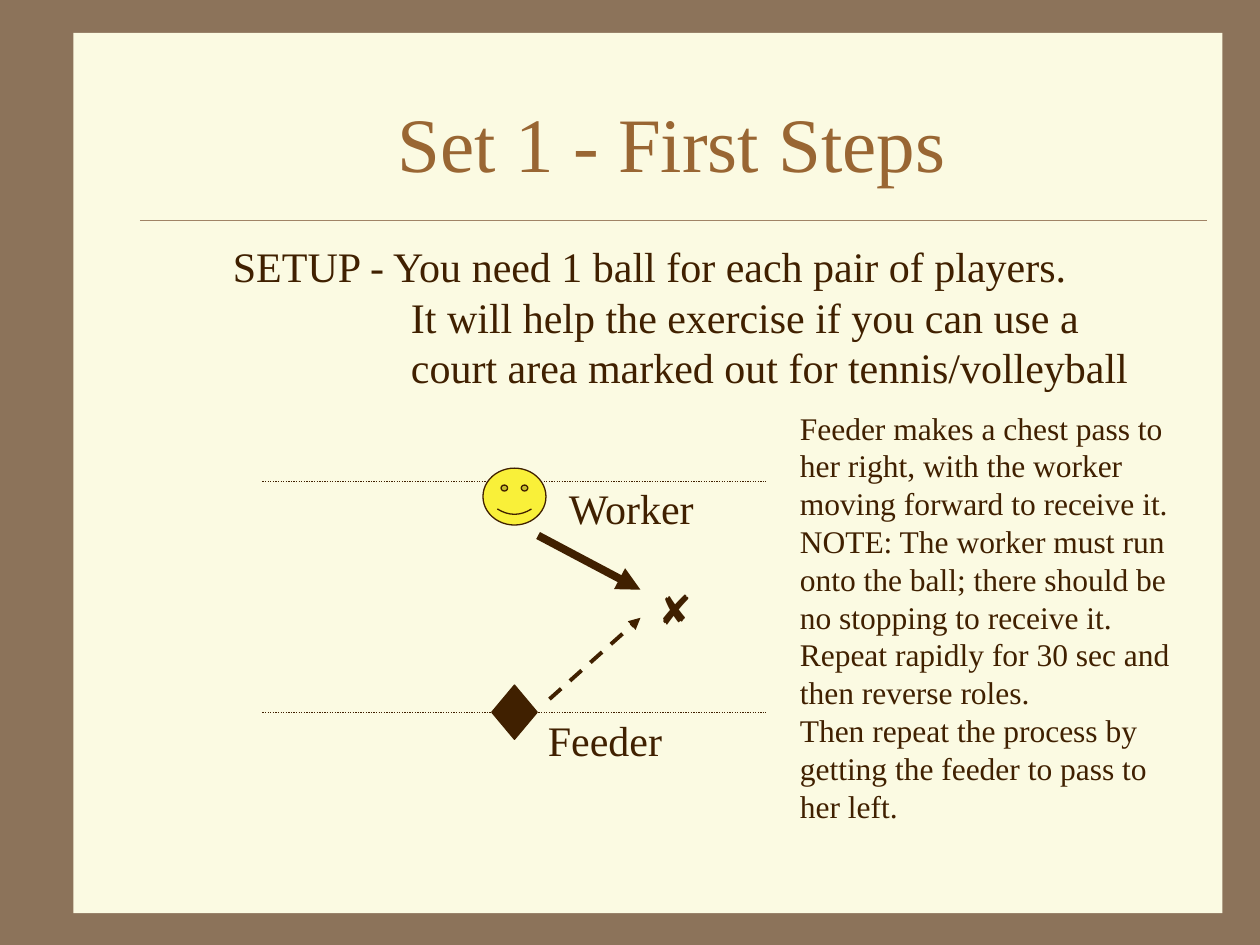
import pptx
import pptx.util
import pptx.dml.color
import pptx.enum.dml
import pptx.enum.shapes
import pptx.enum.text
import pptx.oxml.ns
import lxml.etree

Pt = pptx.util.Pt
Shape = pptx.enum.shapes.MSO_SHAPE
Dash = pptx.enum.dml.MSO_LINE
BROWN = "402000"


def color(value):
    return pptx.dml.color.RGBColor.from_string(value)


def add_text(left, top, width, height, paragraphs, size, wrap=True):
    box = slide.shapes.add_textbox(Pt(left), Pt(top), Pt(width), Pt(height))
    frame = box.text_frame
    frame.word_wrap = wrap
    frame.margin_top = Pt(5.5)
    frame.margin_bottom = Pt(0)
    frame.text = "\n".join(paragraphs)
    for paragraph in frame.paragraphs:
        paragraph.line_spacing = Pt(size * 1.2)
        paragraph.font.size = Pt(size)
        paragraph.font.name = "Times New Roman"
        paragraph.font.color.rgb = color(BROWN)
    return frame


presentation = pptx.Presentation()
presentation.slide_width = Pt(720)
presentation.slide_height = Pt(540)
slide = presentation.slides.add_slide(presentation.slide_layouts[5])
slide.background.fill.solid()
slide.background.fill.fore_color.rgb = color("8C735A")

panel = slide.shapes.add_shape(Shape.RECTANGLE, Pt(42), Pt(18.75), Pt(656.5), Pt(503))
panel.shadow.inherit = False
panel.fill.solid()
panel.fill.fore_color.rgb = color("FBFAE2")
panel.line.fill.background()

title = slide.shapes.title
title._element.getparent().append(title._element)
title.left, title.top, title.width, title.height = Pt(78), Pt(36), Pt(612), Pt(90)
title.text_frame.text = "Set 1 - First Steps"
title.text_frame.vertical_anchor = pptx.enum.text.MSO_ANCHOR.MIDDLE
heading = title.text_frame.paragraphs[0]
heading.alignment = pptx.enum.text.PP_ALIGN.CENTER
heading.font.size = Pt(44)
heading.font.name = "Times New Roman"
heading.font.color.rgb = color("996633")

setup = add_text(126, 132, 528, 93.5, [
    "SETUP - You need 1 ball for each pair of players.\v"
    "It will help the exercise if you can use a\v"
    "court area marked out for tennis/volleyball"], 24)
setup.margin_right = Pt(0)
setup_properties = setup.paragraphs[0]._p.get_or_add_pPr()
setup_properties.set("marL", str(Pt(101.75)))
setup_properties.set("indent", str(-Pt(101.75)))

lines = [
    (80, 126, 690, 126, "A08366", 0.25, None, False),
    (150, 275, 438, 275, BROWN, 0.75, Dash.ROUND_DOT, False),
    (150, 407, 438, 407, BROWN, 0.75, Dash.ROUND_DOT, False),
    (307.5, 306, 366, 337, BROWN, 4.5, None, True),
    (314, 399.5, 366, 353, BROWN, 2.25, Dash.DASH, True),
]
for x1, y1, x2, y2, line_color, width, dash, arrow in lines:
    connector = slide.shapes.add_connector(
        pptx.enum.shapes.MSO_CONNECTOR.STRAIGHT, Pt(x1), Pt(y1), Pt(x2), Pt(y2))
    connector.line.color.rgb = color(line_color)
    connector.line.width = Pt(width)
    if dash:
        connector.line.dash_style = dash
    if arrow:
        lxml.etree.SubElement(connector.line._get_or_add_ln(),
                              pptx.oxml.ns.qn("a:tailEnd"), type="triangle")
    lxml.etree.SubElement(connector._element.spPr, pptx.oxml.ns.qn("a:effectLst"))

players = [
    (Shape.DIAMOND, 281, 391.5, 26, 31, BROWN),
    (Shape.SMILEY_FACE, 276, 267.5, 36, 32.5, "F9F039"),
]
for kind, left, top, width, height, fill in players:
    player = slide.shapes.add_shape(kind, Pt(left), Pt(top), Pt(width), Pt(height))
    player.shadow.inherit = False
    player.fill.solid()
    player.fill.fore_color.rgb = color(fill)
    player.line.color.rgb = color(BROWN)
    player.line.width = Pt(0.75)

labels = [
    ("Feeder", 306, 403, 80),
    ("Worker", 318, 270, 88),
    ("✘", 371, 327.5, 36.5),
]
for label, left, top, width in labels:
    add_text(left, top, width, 36, [label], 24, wrap=False)

add_text(450, 228, 230.5, 245, [
    "Feeder makes a chest pass to\v"
    "her right, with the worker\v"
    "moving forward to receive it.\v"
    "NOTE: The worker must run\v"
    "onto the ball; there should be\v"
    "no stopping to receive it.",
    "Repeat rapidly for 30 sec and\vthen reverse roles.",
    "Then repeat the process by getting the feeder to pass to her left."], 18)

presentation.save("out.pptx")
